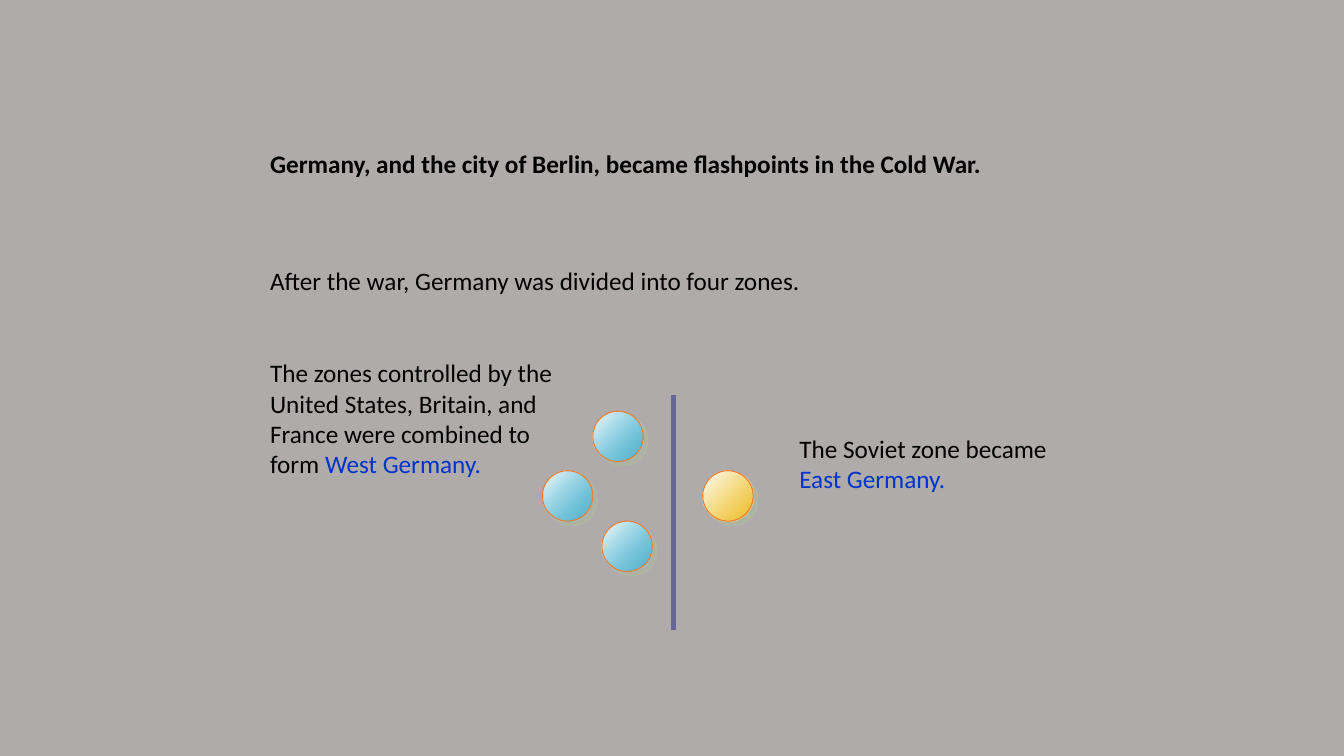
from pptx import Presentation
from pptx.dml.color import RGBColor
from pptx.enum.shapes import MSO_CONNECTOR as CONN, MSO_SHAPE as SHAPE
from pptx.enum.text import MSO_AUTO_SIZE as AUTO
from pptx.oxml.ns import qn
from pptx.util import Inches, Pt
from lxml import etree

BLACK, BLUE, WHITE = "000000", "0033CC", "FFFFFF"
WEST, EAST = ("00B0F0", 50), ("FFC000", 79)  # colour, opacity in percent
ZONE_SIZE = 0.5
ZONES = [(5.88, 4.08, WEST), (5.38, 4.67, WEST), (5.97, 5.17, WEST), (6.97, 4.67, EAST)]


def rgb(color):
    return RGBColor.from_string(color)


def set_alpha(clr, percent):
    etree.SubElement(clr, qn("a:alpha"), val=str(percent * 1000))


def add_text(slide, box, runs, bold=False, wrap=True):
    tf = slide.shapes.add_textbox(*map(Inches, box)).text_frame
    tf.word_wrap = wrap
    tf.auto_size = AUTO.SHAPE_TO_FIT_TEXT
    p = tf.paragraphs[0]
    for text, color in runs:
        r = p.add_run()
        r.text = text
        for name, value in {"name": "Calibri", "size": Pt(18), "bold": bold}.items():
            setattr(r.font, name, value)
        r.font.color.rgb = rgb(color)


def add_divider(slide, x, top, bottom):
    line = slide.shapes.add_connector(CONN.STRAIGHT, *map(Inches, (x, top, x, bottom)))
    line.line.color.rgb = rgb("666699")
    line.line.width = Pt(4)
    etree.SubElement(line._element.spPr, qn("a:effectLst"))


def add_zone(slide, x, y, tint):
    color, opacity = tint
    sp = slide.shapes.add_shape(SHAPE.OVAL, *map(Inches, (x, y, ZONE_SIZE, ZONE_SIZE)))
    sp.line.color.rgb = rgb("ED7D31")
    sp.line.width = Pt(0.75)

    # Gradient from the tint at lower right to white at upper left
    sp.fill.gradient()
    sp.fill.gradient_angle = 135
    for stop, stop_color in zip(sp.fill.gradient_stops, (color, WHITE)):
        stop.color.rgb = rgb(stop_color)
    spPr = sp._element.spPr
    set_alpha(spPr.find(f"{qn('a:gradFill')}//{qn('a:srgbClr')}"), opacity)

    # Hard shadow towards lower right
    sp.shadow.inherit = False
    shadow = etree.SubElement(spPr.find(qn("a:effectLst")), qn("a:outerShdw"),
                              blurRad="0", dist=str(Pt(4.2)), dir=str(45 * 60000),
                              algn="ctr", rotWithShape="0")
    set_alpha(etree.SubElement(shadow, qn("a:srgbClr"), val="ADC793"), 46)


def main():
    prs = Presentation()
    prs.slide_width, prs.slide_height = Inches(13.33), Inches(7.5)
    slide = prs.slides.add_slide(prs.slide_layouts[6])
    slide.background.fill.solid()
    slide.background.fill.fore_color.rgb = rgb("AFABAB")

    # Heading and statements
    add_text(slide, (2.58, 1.42, 8.08, 0.4),
             [("Germany, and the city of Berlin, became flashpoints in the Cold War.", BLACK)],
             bold=True)
    add_text(slide, (7.83, 4.25, 2.83, 0.71),
             [("The Soviet zone became ", BLACK), ("East Germany.", BLUE)])
    add_text(slide, (2.58, 3.5, 3.08, 1.31),
             [("The zones controlled by the United States, Britain, and France "
               "were combined to form ", BLACK), ("West Germany.", BLUE)])
    add_text(slide, (2.58, 2.58, 5.52, 0.4),
             [("After the war, Germany was divided into four zones.", BLACK)], wrap=False)

    # Border between west and east, with the four zones
    add_divider(slide, 6.68, 3.92, 6.25)
    for x, y, tint in ZONES:
        add_zone(slide, x, y, tint)

    prs.save("out.pptx")


if __name__ == "__main__":
    main()
